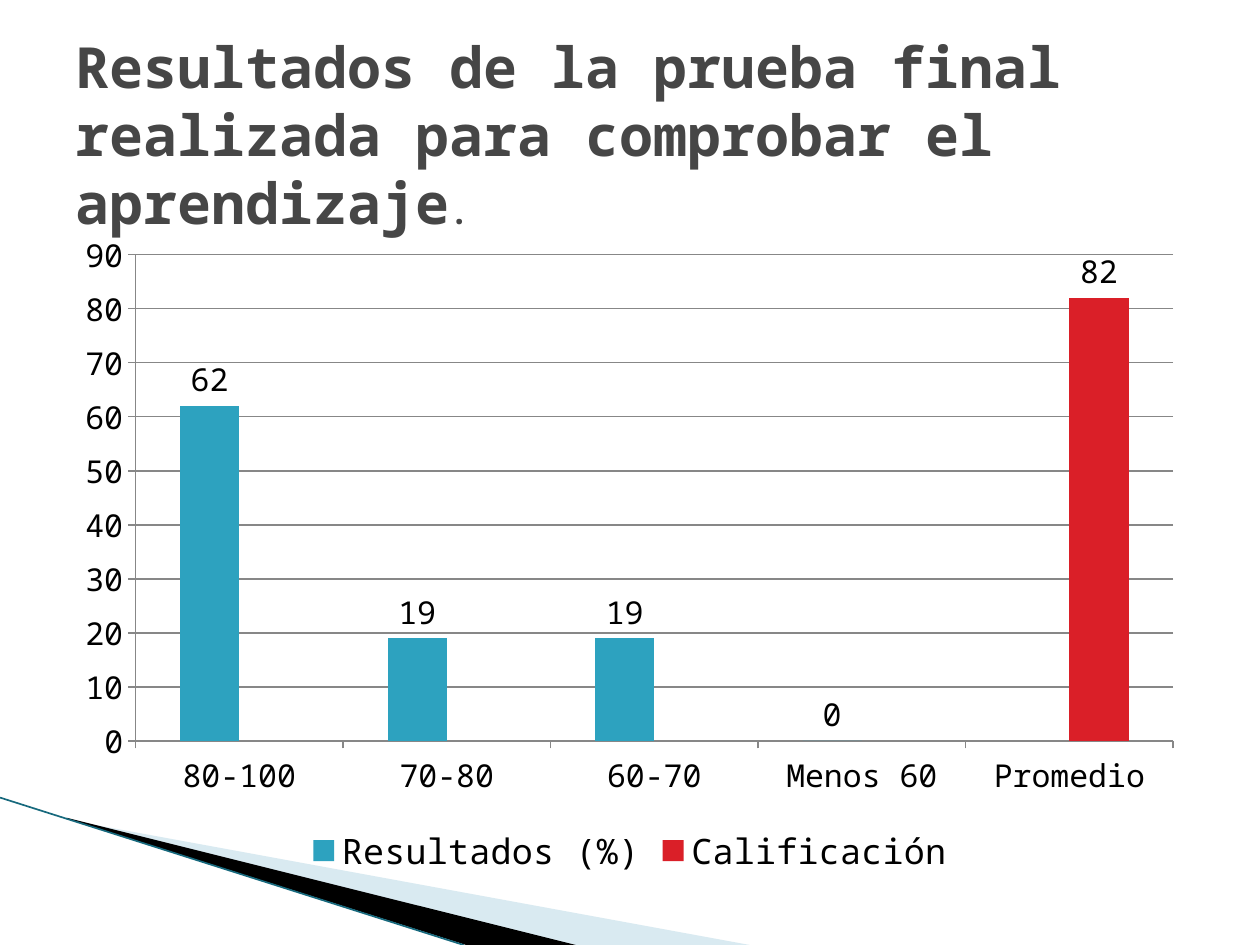
from lxml.etree import SubElement
from pptx import Presentation
from pptx.chart.data import CategoryChartData
from pptx.dml.color import RGBColor
from pptx.enum.chart import XL_CHART_TYPE, XL_LABEL_POSITION, XL_LEGEND_POSITION, XL_TICK_MARK
from pptx.enum.shapes import MSO_CONNECTOR
from pptx.enum.text import MSO_ANCHOR, MSO_AUTO_SIZE, PP_ALIGN
from pptx.oxml import parse_xml
from pptx.oxml.ns import nsdecls, qn
from pptx.util import Inches, Pt

FONT = "Noto Sans Mono"
TITLE = [
    ("Resultados de la prueba final realizada para comprobar el aprendizaje", 32.4),
    (".", 18),
]
CATEGORIES = ["80-100", "70-80", "60-70", "Menos 60", "Promedio"]
SERIES = [
    ("Resultados (%)", [62, 19, 19, 0, None], "2DA2BF"),
    ("Calificación", [None, None, None, None, 82], "DA1F28"),
]
WEDGES = [
    ([(0.55, 6.51), (5.95, 7.5), (4.56, 7.5), (0.55, 6.5)], "A0CBDC", 40),
    ([(0.53, 6.49), (4.57, 7.5), (3.7, 7.5), (0.54, 6.5)], "000000", 100),
]
EDGE = (0, 6.33, 3.68, 7.5)
PLOT = {"x": 0.064, "y": 0.052, "w": 0.915, "h": 0.735}


def rgb(value):
    return RGBColor.from_string(value)


def style(font, size, color="000000", bold=False):
    font.name, font.size, font.bold = FONT, Pt(size), bold
    font.color.rgb = rgb(color)


def add_text(p, text, **fmt):
    r = p.add_run()
    r.text = text
    style(r.font, **fmt)


def add_wedge(s, points, color, opacity):
    corners = [(Inches(x), Inches(y)) for x, y in points]
    builder = s.shapes.build_freeform(*corners[0], scale=1.0)
    builder.add_line_segments(corners[1:], close=True)
    sp = builder.convert_to_shape()
    sp.shadow.inherit = False
    sp.line.fill.background()
    sp.fill.solid()
    sp.fill.fore_color.rgb = rgb(color)
    if opacity < 100:
        clr = sp._element.spPr.find(".//" + qn("a:srgbClr"))
        SubElement(clr, qn("a:alpha"), val=str(opacity * 1000))


def add_results_chart(s):
    data = CategoryChartData(number_format="0")
    data.categories = CATEGORIES
    for name, values, _ in SERIES:
        data.add_series(name, values)
    chart = s.shapes.add_chart(
        XL_CHART_TYPE.COLUMN_CLUSTERED,
        Inches(0.5), Inches(1.75), Inches(9), Inches(5.25), data,
    ).chart
    style(chart.font, 18)
    chart.has_title = False
    chart.has_legend = True
    chart.legend.position = XL_LEGEND_POSITION.BOTTOM
    chart.legend.include_in_layout = False
    style(chart.legend.font, 20)

    plot = chart.plots[0]
    plot.gap_width, plot.overlap, plot.vary_by_categories = 150, 0, False
    for series, (_, _, color) in zip(plot.series, SERIES):
        series.format.fill.solid()
        series.format.fill.fore_color.rgb = rgb(color)
        labels = series.data_labels
        labels.show_value = True
        labels.number_format, labels.number_format_is_linked = "0", False
        labels.position = XL_LABEL_POSITION.OUTSIDE_END
        style(labels.font, 18)

    value_axis = chart.value_axis
    value_axis.minimum_scale, value_axis.maximum_scale = 0, 90
    value_axis.major_unit = 10
    value_axis.has_major_gridlines = True
    for axis in (chart.category_axis, value_axis):
        axis.major_tick_mark = XL_TICK_MARK.OUTSIDE
        style(axis.tick_labels.font, 18)
    for part in (chart.category_axis, value_axis, value_axis.major_gridlines):
        part.format.line.color.rgb = rgb("878787")
        part.format.line.width = Pt(0.75)

    area = chart._chartSpace.chart.plotArea
    for old in area.findall(qn("c:layout")):
        area.remove(old)
    sizes = "".join(f'<c:{k} val="{v}"/>' for k, v in PLOT.items())
    area.insert(0, parse_xml(
        f'<c:layout {nsdecls("c")}><c:manualLayout><c:layoutTarget val="inner"/>'
        f'<c:xMode val="edge"/><c:yMode val="edge"/>{sizes}</c:manualLayout></c:layout>'
    ))


prs = Presentation()
prs.slide_width, prs.slide_height = Inches(10), Inches(7.5)
s = prs.slides.add_slide(prs.slide_layouts[5])

for wedge in WEDGES:
    add_wedge(s, *wedge)
edge = s.shapes.add_connector(MSO_CONNECTOR.STRAIGHT, *map(Inches, EDGE))
edge.line.color.rgb = rgb("17697D")
edge.line.width = Pt(0.95)
SubElement(edge._element.spPr, qn("a:effectLst"))

add_results_chart(s)

title = s.shapes.title
title.left, title.top, title.width, title.height = map(Inches, (0.5, 0.3, 9, 1.53))
tf = title.text_frame
tf.word_wrap, tf.auto_size = True, MSO_AUTO_SIZE.NONE
tf.vertical_anchor = MSO_ANCHOR.MIDDLE
p = tf.paragraphs[0]
p.alignment = PP_ALIGN.LEFT
for text, size in TITLE:
    add_text(p, text, size=size, color="464646", bold=True)

prs.save("out.pptx")
